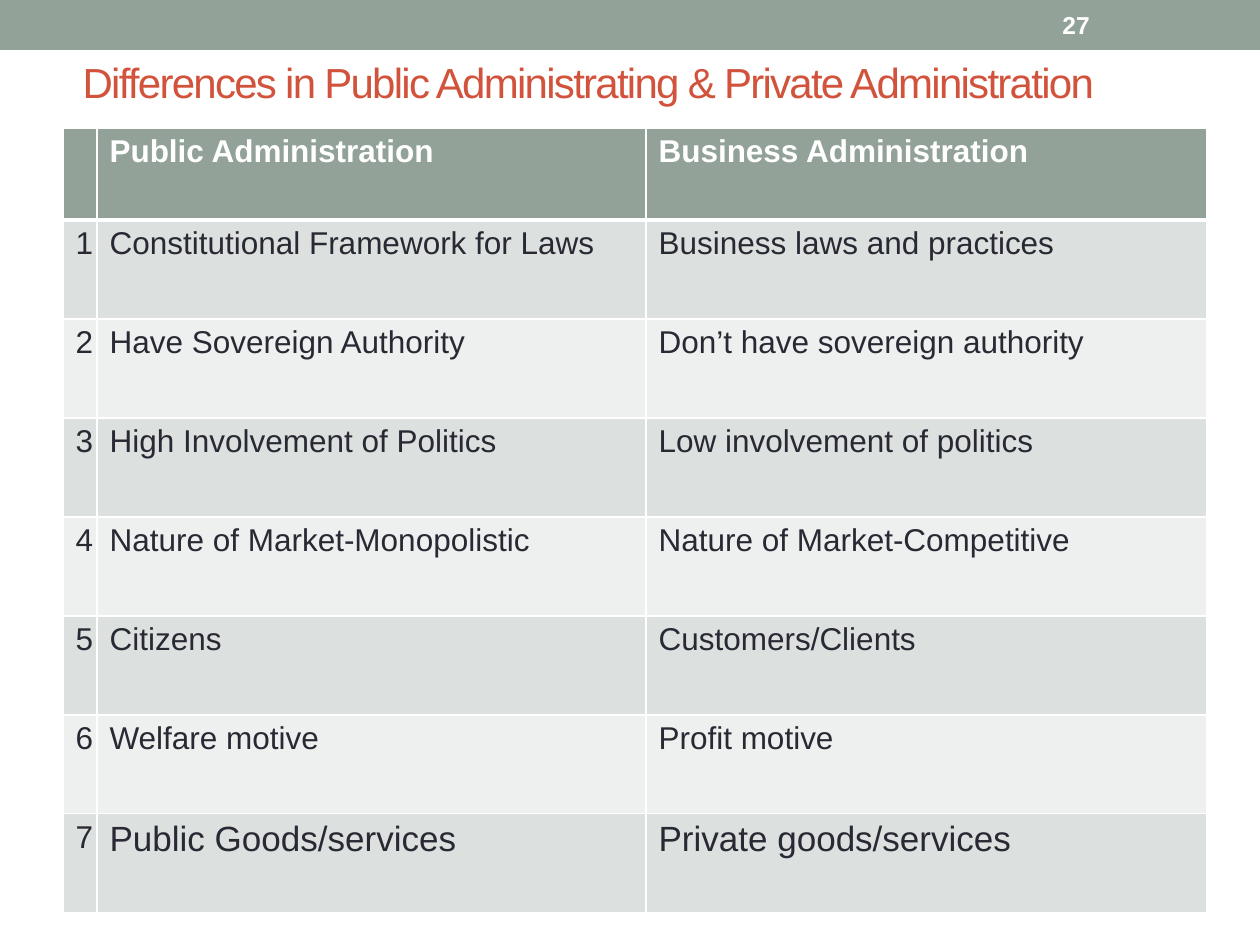
from lxml import etree
from pptx import Presentation
from pptx import util as u
from pptx.dml.color import RGBColor
from pptx.enum import shapes, text
from pptx.oxml.ns import qn

SCALE = 914400 / 126
HUES = {"sage": "93A299", "rust": "D2533C", "ink": "292934",
        "white": "FFFFFF", "dark": "DCE0DE", "light": "EEF0EF"}
ROWS = [
    ("", "Public Administration", "Business Administration"),
    ("1", "Constitutional Framework for Laws", "Business laws and practices"),
    ("2", "Have Sovereign Authority", "Don’t have sovereign authority"),
    ("3", "High Involvement of Politics", "Low involvement of politics"),
    ("4", "Nature of Market-Monopolistic", "Nature of Market-Competitive"),
    ("5", "Citizens", "Customers/Clients"),
    ("6", "Welfare motive", "Profit motive"),
    ("7", "Public Goods/services", "Private goods/services"),
]


def px(*sizes):
    """Turn px lengths into EMU."""
    return [u.Emu(round(size * SCALE)) for size in sizes]


def hue(name):
    """Return the named colour."""
    return RGBColor.from_string(HUES[name])


def write(frame, words, size=18, color="ink", bold=False, align="LEFT", track=0):
    """Write one formatted paragraph into a text frame."""
    para = frame.paragraphs[0]
    para.alignment = getattr(text.PP_ALIGN, align)
    run = para.add_run()
    run.text = words
    font = run.font
    font.name, font.size, font.bold = "Arial", u.Pt(size), bold
    font.color.rgb = hue(color)
    if track:
        font._element.set("spc", str(track * 100))


def label(slide, box, words, **style):
    """Add a vertically centred text box."""
    frame = slide.shapes.add_textbox(*px(*box)).text_frame
    frame.word_wrap = True
    frame.vertical_anchor = text.MSO_ANCHOR.MIDDLE
    write(frame, words, **style)


def edge(cell, top, base):
    """Draw white cell borders with the given top and base widths in points."""
    props = cell._tc.get_or_add_tcPr()
    sides = {"L": 1, "R": 1, "T": top, "B": base}
    for spot, (side, width) in enumerate(sides.items()):
        line = etree.Element(qn(f"a:ln{side}"), w=str(u.Pt(width)))
        fill = etree.SubElement(line, qn("a:solidFill"))
        etree.SubElement(fill, qn("a:srgbClr"), val=HUES["white"])
        props.insert(spot, line)


def banner(slide, box):
    """Draw the top band with its page number."""
    left, top, width, height = box
    band = slide.shapes.add_shape(shapes.MSO_SHAPE.RECTANGLE, *px(*box))
    band.shadow.inherit = False
    band.fill.solid()
    band.fill.fore_color.rgb = hue("sage")
    band.line.fill.background()
    label(slide, (left + 1050, top + 2, 147, height - 4), "27",
          size=14, color="white", bold=True)


def grid(slide, box, cols, head):
    """Draw the comparison table with a header and banded rows."""
    table = slide.shapes.add_table(len(ROWS), len(cols), *px(*box)).table
    for col, width in zip(table.columns, px(*cols)):
        col.width = width
    body = (box[3] - head) / (len(ROWS) - 1)
    for r, row in enumerate(ROWS):
        table.rows[r].height = px(body if r else head)[0]
        fill = ("dark" if r % 2 else "light") if r else "sage"
        for c, words in enumerate(row):
            cell = table.cell(r, c)
            cell.fill.solid()
            cell.fill.fore_color.rgb = hue(fill)
            edge(cell, 3 if r == 1 else 1, 1 if r else 3)
            if words:
                large = c and r == len(ROWS) - 1
                write(cell.text_frame, words, size=20 if large else 18,
                      color="ink" if r else "white", bold=not r)


def main():
    """Build and save the slide."""
    deck = Presentation()
    deck.slide_width, deck.slide_height = px(1260, 945)
    slide = deck.slides.add_slide(deck.slide_layouts[6])
    banner(slide, (0, 0, 1260, 50))
    label(slide, (63, 38, 1050, 88),
          "Differences in Public Administrating & Private Administration",
          size=24, color="rust", align="CENTER", track=-1)
    grid(slide, (63, 128, 1144, 785), (34, 549, 561), 92)
    deck.save("out.pptx")


if __name__ == "__main__":
    main()
